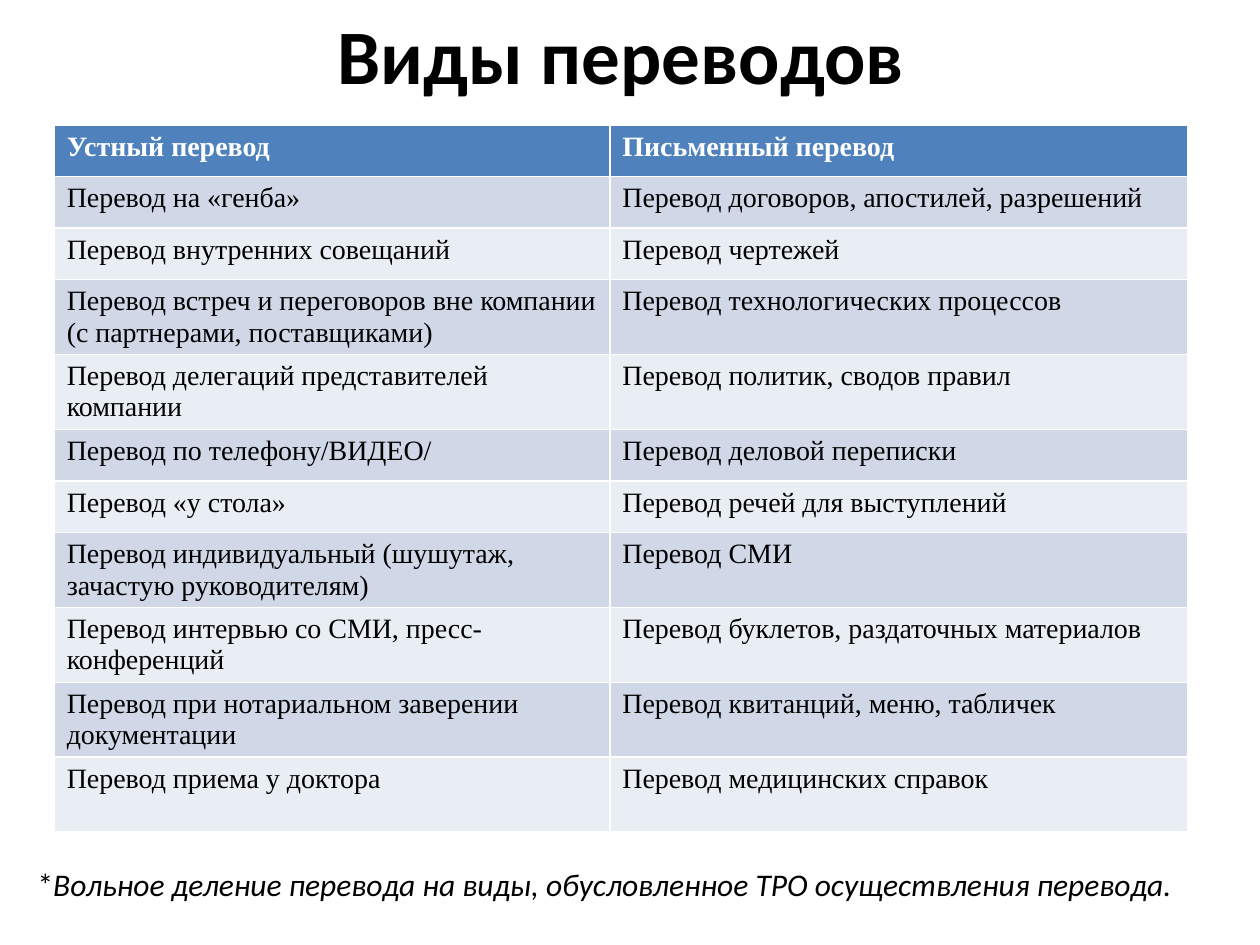
from pptx import Presentation
from pptx.dml.color import RGBColor
from pptx.enum.text import MSO_ANCHOR, PP_ALIGN
from pptx.util import Inches, Pt

CENTER = PP_ALIGN.CENTER
MIDDLE = MSO_ANCHOR.MIDDLE
TITLE_ONLY = 5

HEADER_FILL = "4F81BD"
BAND_FILLS = ("E9EDF4", "D0D8E8")
COLUMN_WIDTHS = (4.41, 4.59)
ROW_HEIGHT = 0.41
LAST_ROW_HEIGHT = 0.59

ROWS = [
    ("Устный перевод", "Письменный перевод"),
    ("Перевод на «генба»", "Перевод договоров, апостилей, разрешений"),
    ("Перевод внутренних совещаний", "Перевод чертежей"),
    ("Перевод встреч и переговоров вне компании (с партнерами, поставщиками)",
     "Перевод технологических процессов"),
    ("Перевод делегаций представителей компании",
     "Перевод политик, сводов правил"),
    ("Перевод по телефону/ВИДЕО/", "Перевод деловой переписки"),
    ("Перевод «у стола»", "Перевод речей для выступлений"),
    ("Перевод индивидуальный (шушутаж, зачастую руководителям)",
     "Перевод СМИ"),
    ("Перевод интервью со СМИ, пресс-конференций",
     "Перевод буклетов, раздаточных материалов"),
    ("Перевод при нотариальном заверении документации",
     "Перевод квитанций, меню, табличек"),
    ("Перевод приема у доктора", "Перевод медицинских справок"),
]


def rgb(value):
    return RGBColor.from_string(value)


def set_font(font, name, size, color, bold=False):
    font.name = name
    font.size = Pt(size)
    font.color.rgb = rgb(color)
    font.bold = bold


def add_title(s, left, top, width, height):
    sp = s.shapes.title
    sp.left, sp.top = Inches(left), Inches(top)
    sp.width, sp.height = Inches(width), Inches(height)
    tf = sp.text_frame
    tf.text = "Виды переводов"
    tf.vertical_anchor = MIDDLE
    p = tf.paragraphs[0]
    p.alignment = CENTER
    set_font(p.font, "Calibri", 44, "000000", bold=True)


def add_translation_table(s, left, top, width, height):
    # The default table style supplies the white borders
    table = s.shapes.add_table(
        len(ROWS), len(COLUMN_WIDTHS),
        Inches(left), Inches(top), Inches(width), Inches(height)).table
    for column, column_width in zip(table.columns, COLUMN_WIDTHS):
        column.width = Inches(column_width)
    for row in table.rows:
        row.height = Inches(ROW_HEIGHT)
    table.rows[len(ROWS) - 1].height = Inches(LAST_ROW_HEIGHT)

    for i, texts in enumerate(ROWS):
        header = i == 0
        for j, text in enumerate(texts):
            cell = table.cell(i, j)
            cell.text = text
            cell.fill.solid()
            cell.fill.fore_color.rgb = rgb(
                HEADER_FILL if header else BAND_FILLS[i % 2])
            set_font(cell.text_frame.paragraphs[0].font, "Times New Roman",
                     16, "FFFFFF" if header else "000000", bold=header)


def add_footnote(s, left, top, width, height):
    tf = s.shapes.add_textbox(Inches(left), Inches(top),
                              Inches(width), Inches(height)).text_frame
    tf.word_wrap = True
    p = tf.paragraphs[0]
    set_font(p.font, "Calibri", 18, "000000")
    p.add_run().text = "*"
    r = p.add_run()
    r.text = ("Вольное деление перевода на виды, "
              "обусловленное TPO осуществления перевода.")
    r.font.italic = True


def main():
    prs = Presentation()
    prs.slide_width, prs.slide_height = Inches(10), Inches(7.5)
    s = prs.slides.add_slide(prs.slide_layouts[TITLE_ONLY])
    add_title(s, 0.43, 0, 9, 0.85)
    add_translation_table(s, 0.43, 0.99, 9, 5.83)
    add_footnote(s, 0.2, 6.82, 9.8, 0.4)
    prs.save("out.pptx")


if __name__ == "__main__":
    main()
